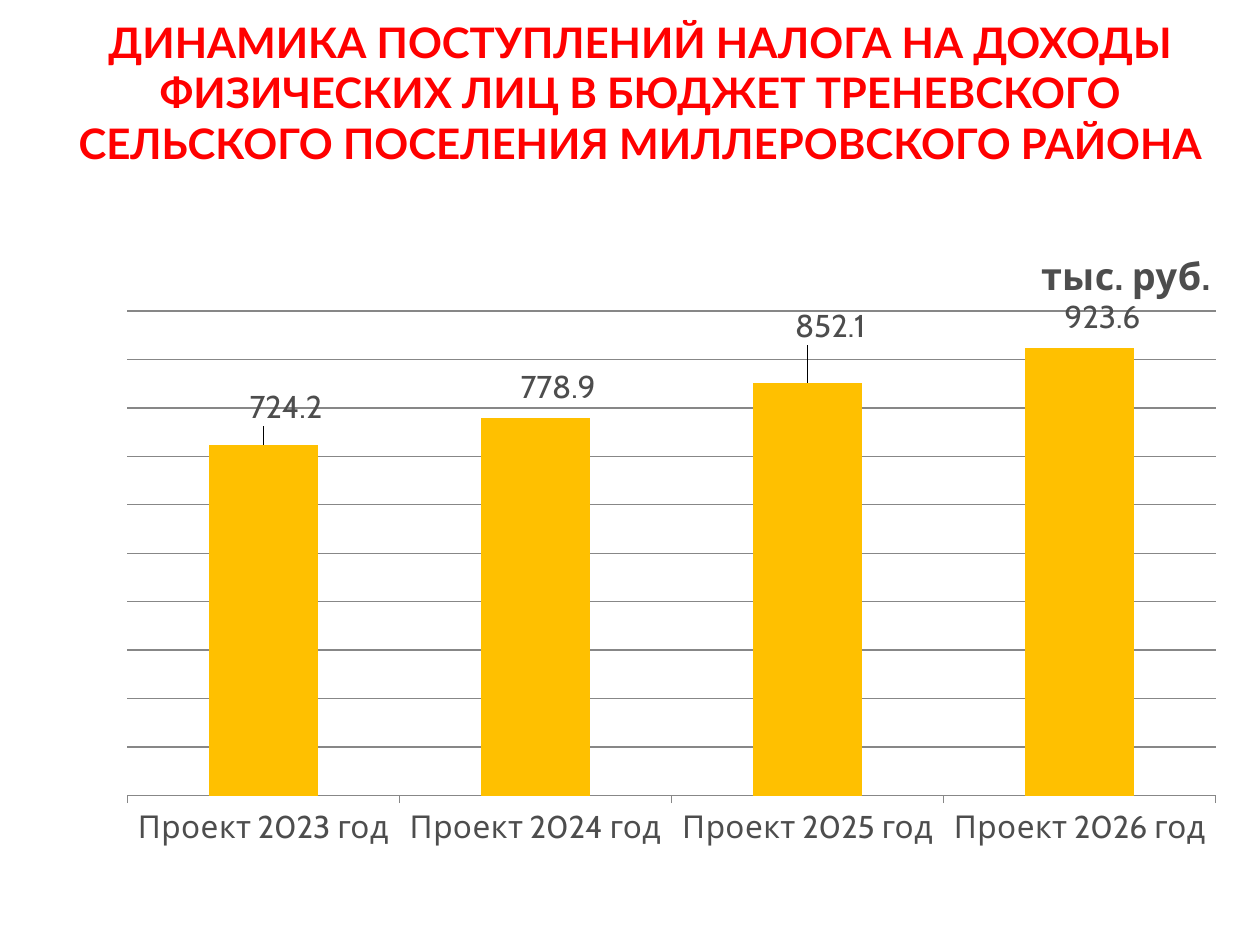
from dataclasses import dataclass
from lxml.etree import SubElement
from pptx import Presentation
from pptx.chart.data import CategoryChartData
from pptx.dml.color import RGBColor
from pptx.enum.chart import XL_CHART_TYPE, XL_LABEL_POSITION, XL_TICK_LABEL_POSITION, XL_TICK_MARK
from pptx.enum.text import MSO_AUTO_SIZE, PP_ALIGN
from pptx.oxml import parse_xml
from pptx.oxml.ns import nsdecls, qn
from pptx.util import Inches, Pt


@dataclass
class Bar:
    year: int
    value: float
    rise: float


BARS = [
    Bar(2023, 724.2, -0.02),
    Bar(2024, 778.9, -0.01),
    Bar(2025, 852.1, -0.05),
    Bar(2026, 923.6, -0.01),
]
HEAD = (
    "ДИНАМИКА ПОСТУПЛЕНИЙ НАЛОГА НА ДОХОДЫ\n"
    "ФИЗИЧЕСКИХ ЛИЦ В БЮДЖЕТ ТРЕНЕВСКОГО "
    "СЕЛЬСКОГО ПОСЕЛЕНИЯ МИЛЛЕРОВСКОГО РАЙОНА"
)
GREY = "4D4D4D"


def paint(target, code: str) -> None:
    target.rgb = RGBColor.from_string(code)


def style(item, values: dict) -> None:
    for name, value in values.items():
        setattr(item, name, value)


def ink(font, face: str, size: float, code: str, bold: bool = False) -> None:
    style(font, {"name": face, "size": Pt(size), "bold": bold})
    paint(font.color, code)


def place(node, index: int, values: dict) -> None:
    for old in node.findall(qn("c:layout")):
        node.remove(old)
    layout = parse_xml(f"<c:layout {nsdecls('c')}><c:manualLayout/></c:layout>")
    for name, value in values.items():
        SubElement(layout[0], qn(f"c:{name}")).set("val", str(value))
    node.insert(index, layout)


def add_head(slide) -> None:
    box = slide.shapes.add_textbox(Inches(0.33), Inches(0.08), Inches(9.5), Inches(1.31))
    frame = box.text_frame
    style(frame, {"word_wrap": True, "auto_size": MSO_AUTO_SIZE.SHAPE_TO_FIT_TEXT})
    para = frame.paragraphs[0]
    para.text = HEAD
    para.alignment = PP_ALIGN.CENTER
    for run in para.runs:
        ink(run.font, "Lato", 24, "FF0000", True)


def add_axes(chart) -> None:
    cats, scale = chart.category_axis, chart.value_axis
    style(cats, {"major_tick_mark": XL_TICK_MARK.OUTSIDE, "has_major_gridlines": False})
    style(scale, {
        "visible": False,
        "has_major_gridlines": True,
        "minimum_scale": 0,
        "maximum_scale": 1000,
        "major_unit": 100,
        "tick_label_position": XL_TICK_LABEL_POSITION.NONE,
    })
    for line in (cats.format.line, scale.major_gridlines.format.line):
        line.width = Pt(0.75)
        paint(line.color, "878787")


def add_bars(plot) -> None:
    style(plot, {"gap_width": 150, "vary_by_categories": False})
    series = plot.series[0]
    series.format.fill.solid()
    paint(series.format.fill.fore_color, "FFC000")
    for index, bar in enumerate(BARS):
        label = series.points[index].data_label
        label.position = XL_LABEL_POSITION.OUTSIDE_END
        ink(label.font, "Cabin", 18, GREY)
    labels = series.data_labels
    style(labels, {"show_value": True, "position": XL_LABEL_POSITION.OUTSIDE_END})
    ink(labels.font, "Cabin", 18, GREY)
    nodes = series._element.iter(qn("c:dLbl"))
    for node, bar in zip(nodes, BARS):
        place(node, 1, {"x": 0.02, "y": bar.rise})


def add_graph(slide) -> None:
    data = CategoryChartData()
    data.categories = [f"Проект {bar.year} год" for bar in BARS]
    data.add_series("Series 1", [bar.value for bar in BARS])
    chart = slide.shapes.add_chart(
        XL_CHART_TYPE.COLUMN_CLUSTERED,
        Inches(0.83), Inches(1.67), Inches(9), Inches(5.15), data,
    ).chart
    style(chart, {"has_legend": False, "has_title": True})
    ink(chart.font, "Cabin", 18, GREY)
    title = chart.chart_title
    title.text_frame.text = "тыс. руб."
    ink(title.text_frame.paragraphs[0].runs[0].font, "Cabin", 21.6, GREY, True)
    place(title._element, 1, {"xMode": "edge", "yMode": "edge", "x": 0.82, "y": 0.05})
    add_axes(chart)
    add_bars(chart.plots[0])
    area = chart._chartSpace.chart.plotArea
    place(area, 0, {
        "layoutTarget": "inner", "xMode": "edge", "yMode": "edge",
        "x": 0.02, "y": 0.155, "w": 0.96, "h": 0.747,
    })


def main() -> None:
    deck = Presentation()
    style(deck, {"slide_width": Inches(10), "slide_height": Inches(7.5)})
    slide = deck.slides.add_slide(deck.slide_layouts[6])
    add_head(slide)
    add_graph(slide)
    deck.save("out.pptx")


if __name__ == "__main__":
    main()
